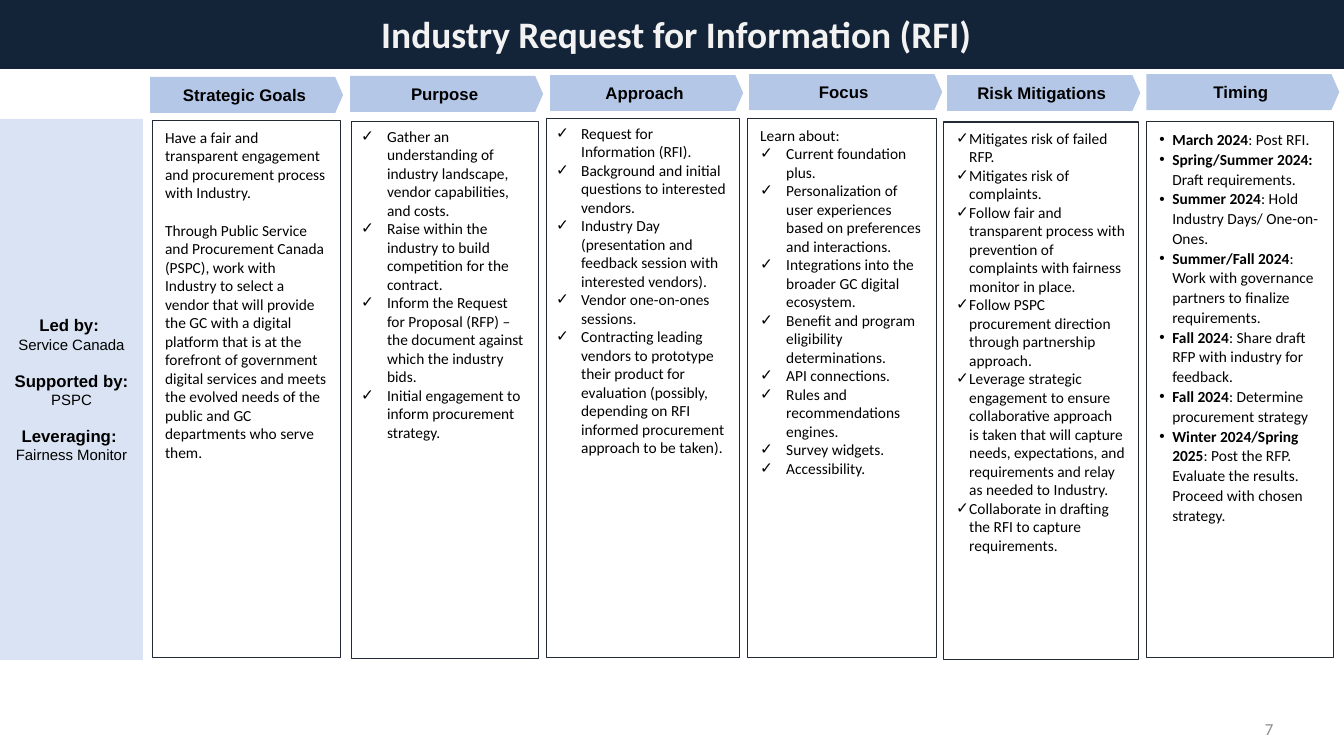
from lxml import etree
from pptx import Presentation
from pptx import util as u
from pptx.dml.color import RGBColor
from pptx.enum import shapes, text
from pptx.oxml import ns

COLORS = {"navy": "132338", "title": "F2F2F2", "side": "DAE3F3", "header": "B4C7E7",
          "border": "222A35", "black": "000000", "number": "8C8C8C"}
PX = 9071.43  # EMU
WIDE, NARROW = (13, 7), (10, 5)
CHECK, DOT = "✓", "•"


class SlideBuilder:
    def __init__(self, presentation):
        self.slide = presentation.slides.add_slide(presentation.slide_layouts[6])

    def lengths(self, *pixels):
        return [u.Emu(round(value * PX)) for value in pixels]

    def box(self, place, fill=None, line=None, kind=shapes.MSO_SHAPE.RECTANGLE,
            insets=NARROW, anchor=text.MSO_ANCHOR.MIDDLE):
        """Add a preset shape ready for text and return it."""
        shape = self.slide.shapes.add_shape(kind, *self.lengths(*place))
        shape.shadow.inherit = False
        if fill:
            shape.fill.solid()
            shape.fill.fore_color.rgb = RGBColor.from_string(COLORS[fill])
        else:
            shape.fill.background()
        if line:
            shape.line.color.rgb = RGBColor.from_string(COLORS[line])
            shape.line.width = u.Pt(0.75)
        else:
            shape.line.fill.background()
        self.frame(shape, insets, anchor)
        return shape

    def text_box(self, place):
        shape = self.slide.shapes.add_textbox(*self.lengths(*place))
        self.frame(shape, NARROW, text.MSO_ANCHOR.MIDDLE)
        return shape

    def frame(self, shape, insets, anchor):
        """Set wrapping, insets and vertical anchor of the text."""
        frame = shape.text_frame
        frame.word_wrap = True
        frame.vertical_anchor = anchor
        frame.margin_left = frame.margin_right = self.lengths(insets[0])[0]
        frame.margin_top = frame.margin_bottom = self.lengths(insets[1])[0]

    def paragraph(self, shape, runs, size, font="Calibri", color="black",
                  align=text.PP_ALIGN.LEFT, before=0, spacing=1.0):
        """Write (words, bold) runs into the first empty or a new paragraph."""
        paragraph = shape.text_frame.paragraphs[0]
        if paragraph.runs:
            paragraph = shape.text_frame.add_paragraph()
        paragraph.alignment = align
        paragraph.space_before = u.Pt(before)
        paragraph.line_spacing = spacing
        for words, bold in runs:
            run = paragraph.add_run()
            run.text = words
            run.font.name = font
            run.font.size = u.Pt(size)
            run.font.bold = bold
            run.font.color.rgb = RGBColor.from_string(COLORS[color])
        return paragraph

    def bullet(self, paragraph, mark, indent):
        properties = paragraph._p.get_or_add_pPr()
        width = self.lengths(indent)[0]
        properties.set("marL", str(width))
        properties.set("indent", str(-width))
        etree.SubElement(properties, ns.qn("a:buFont")).set("typeface", "Arial")
        etree.SubElement(properties, ns.qn("a:buChar")).set("char", mark)

    def header(self, place, words):
        shape = self.box(place, "header", kind=shapes.MSO_SHAPE.PENTAGON)
        shape.adjustments[0] = 0.219
        self.paragraph(shape, [(words, True)], 12, "Arial", align=text.PP_ALIGN.CENTER)

    def column(self, place, insets, intro, items, mark, indent, spacing):
        """Add a bordered box with plain paragraphs, then bulleted ones."""
        shape = self.box(place, line="border", insets=insets, anchor=text.MSO_ANCHOR.TOP)
        for index, words in enumerate(intro):
            self.paragraph(shape, [(words, False)], 11, before=13.4 if index else 0)
        for item in items:
            runs = [(item, False)] if isinstance(item, str) else zip(item, (True, False))
            self.bullet(self.paragraph(shape, runs, 11, spacing=spacing), mark, indent)


COLUMNS = [
    dict(title="Strategic Goals", header=(150, 77), place=(152, 121, 188, 537), insets=WIDE,
         intro=["Have a fair and transparent engagement and procurement process with Industry.",
                "Through Public Service and Procurement Canada (PSPC), work with Industry to "
                "select a vendor that will provide the GC with a digital platform that is at "
                "the forefront of government digital services and meets the evolved needs of "
                "the public and GC departments who serve them."]),
    dict(title="Purpose", header=(350, 76), place=(351, 122, 187, 537), indent=26, items=[
        "Gather an understanding of industry landscape, vendor capabilities, and costs.",
        "Raise within the industry to build competition for the contract.",
        "Inform the Request for Proposal (RFP) – the document against which the industry bids.",
        "Initial engagement to inform procurement strategy."]),
    dict(title="Approach", header=(550, 75), place=(546, 119, 193, 539), indent=25, items=[
        "Request for Information (RFI).",
        "Background and initial questions to interested vendors.",
        "Industry Day (presentation and feedback session with interested vendors).",
        "Vendor one-on-ones sessions.",
        "Contracting leading vendors to prototype their product for evaluation (possibly, "
        "depending on RFI informed procurement approach to be taken)."]),
    dict(title="Focus", header=(749, 74), place=(747, 119, 189, 539), insets=WIDE, indent=26,
         intro=["Learn about:"], items=[
        "Current foundation plus.",
        "Personalization of user experiences based on preferences and interactions.",
        "Integrations into the broader GC digital ecosystem.",
        "Benefit and program eligibility determinations.",
        "API connections.",
        "Rules and recommendations engines.",
        "Survey widgets.",
        "Accessibility."]),
    dict(title="Risk Mitigations", header=(947, 75), place=(943, 122, 195, 538), insets=WIDE,
         indent=13, items=[
        "Mitigates risk of failed RFP.",
        "Mitigates risk of complaints.",
        "Follow fair and transparent process with prevention of complaints with fairness "
        "monitor in place.",
        "Follow PSPC procurement direction through partnership approach.",
        "Leverage strategic engagement to ensure collaborative approach is taken that will "
        "capture needs, expectations, and requirements and relay as needed to Industry.",
        "Collaborate in drafting the RFI to capture requirements."]),
    dict(title="Timing", header=(1146, 74), place=(1146, 122, 187, 536), insets=WIDE,
         indent=13, mark=DOT, spacing=1.07, items=[
        ("March 2024", ": Post RFI."),
        ("Spring/Summer 2024: ", "Draft requirements."),
        ("Summer 2024", ": Hold Industry Days/ One-on-Ones."),
        ("Summer/Fall 2024", ": Work with governance partners to finalize requirements."),
        ("Fall 2024", ": Share draft RFP with industry for feedback."),
        ("Fall 2024", ": Determine procurement strategy"),
        ("Winter 2024/Spring 2025", ": Post the RFP. Evaluate the results. Proceed with "
                                    "chosen strategy.")]),
]
ROLES = [("Led by: ", "Service Canada"), ("Supported by: ", "PSPC"),
         ("Leveraging: ", "Fairness Monitor")]


def main():
    presentation = Presentation()
    presentation.slide_width = u.Inches(13.33)
    presentation.slide_height = u.Inches(7.5)
    builder = SlideBuilder(presentation)
    center = text.PP_ALIGN.CENTER

    number = builder.text_box((981, 709, 302, 40))
    builder.paragraph(number, [("7", False)], 12, color="number", align=text.PP_ALIGN.RIGHT)

    banner = builder.box((0, -1, 1353, 70), "navy")
    builder.paragraph(banner, [("Industry Request for Information (RFI)", True)], 26.7,
                      color="title", align=center)

    side = builder.box((0, 119, 143, 541), "side", insets=WIDE)
    for index, (role, name) in enumerate(ROLES):
        builder.paragraph(side, [(role, True)], 12, "Arial", align=center,
                          before=12.3 if index else 0)
        builder.paragraph(side, [(name, False)], 10.7, "Arial", align=center)

    for column in COLUMNS:
        builder.column(column["place"], column.get("insets", NARROW), column.get("intro", []),
                       column.get("items", []), column.get("mark", CHECK),
                       column.get("indent", 0), column.get("spacing", 1.0))
    for column in COLUMNS:
        builder.header((*column["header"], 193, 36), column["title"])

    presentation.save("out.pptx")


if __name__ == "__main__":
    main()
